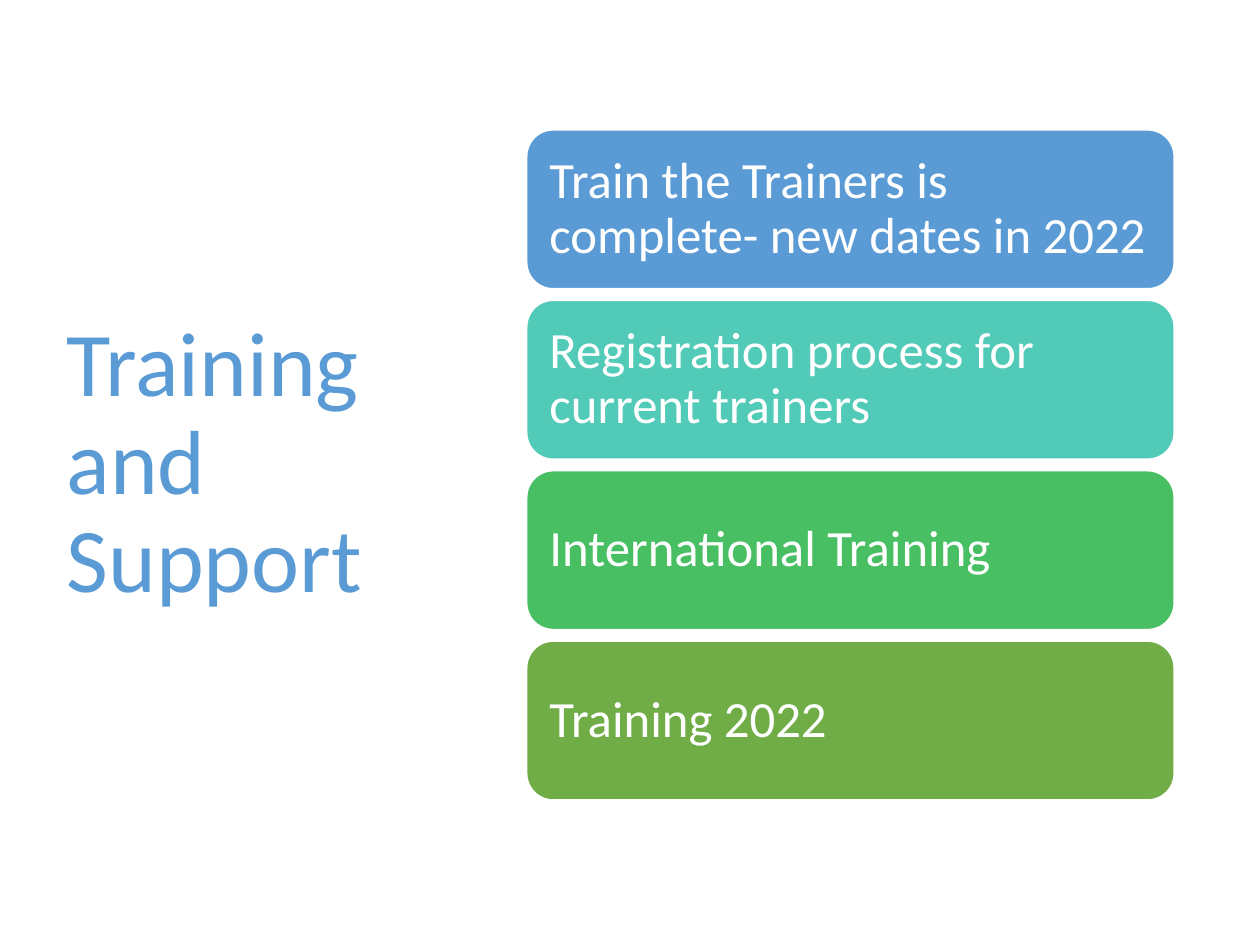
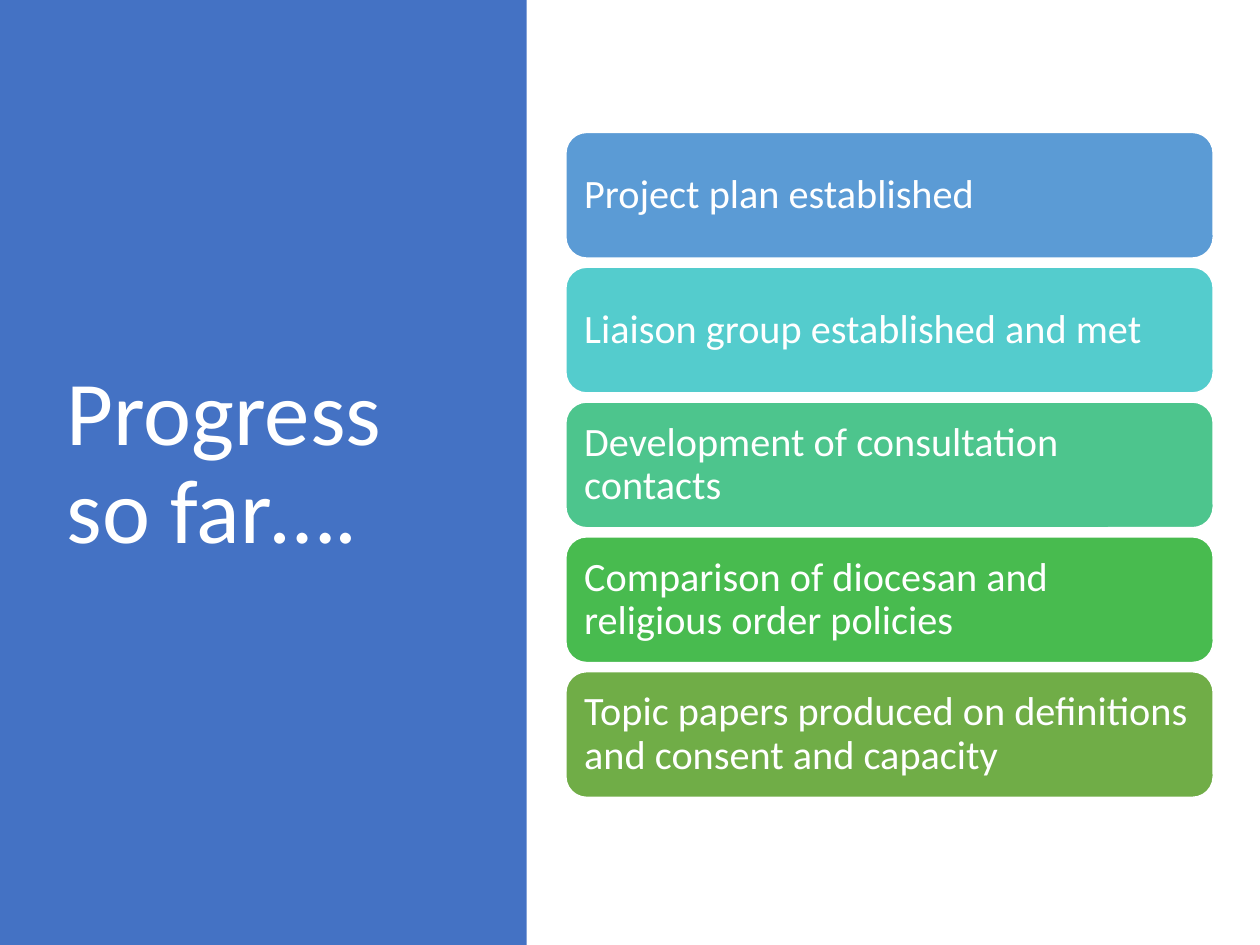
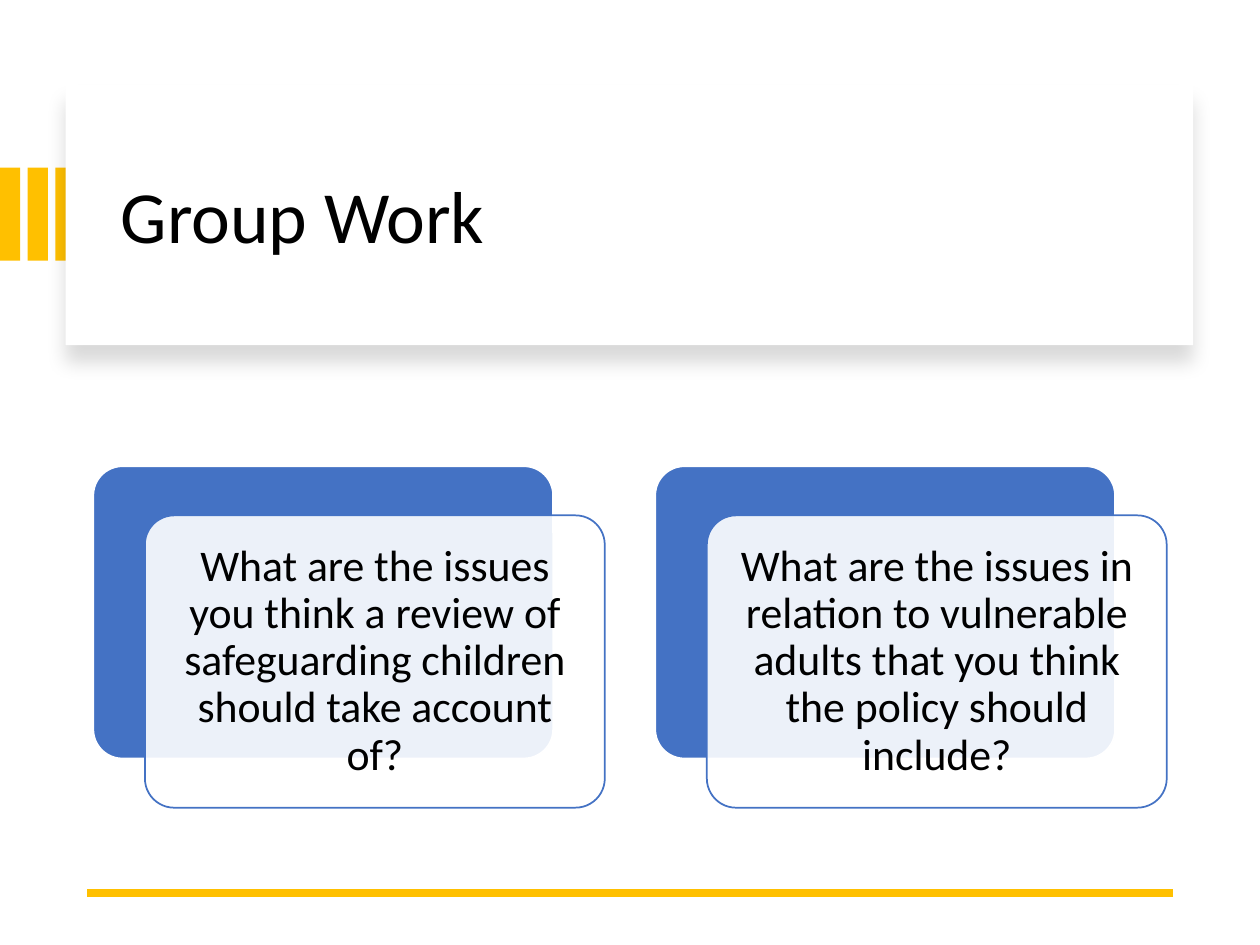
from lxml import etree
from pptx import Presentation
from pptx.dml.color import RGBColor
from pptx.enum.shapes import MSO_CONNECTOR, MSO_SHAPE
from pptx.enum.text import MSO_ANCHOR, PP_ALIGN
from pptx.oxml.ns import qn
from pptx.util import Emu, Pt

RECT, ROUNDED = MSO_SHAPE.RECTANGLE, MSO_SHAPE.ROUNDED_RECTANGLE
SLIDE_WIDTH, SLIDE_HEIGHT = 1000, 750
FONT = "Calibri"
WHITE, BLACK = "FFFFFF", "000000"
SKY, ROYAL, GREEN, AMBER = "5B9BD5", "4472C4", "70AD47", "FFC000"
SIDE_TITLE_BOX = (43, 68, 312, 602)


def px(length):
    """Turn px (100 to the inch) into EMU."""
    return Emu(round(length * 9144))


def rgb(colour):
    return RGBColor.from_string(colour)


def add_text(shape, text, size, colour, align=PP_ALIGN.LEFT, inset=None):
    frame = shape.text_frame
    frame.word_wrap = True
    frame.vertical_anchor = MSO_ANCHOR.MIDDLE
    if inset is not None:
        frame.margin_left = frame.margin_right = px(inset)
        frame.margin_top = frame.margin_bottom = px(inset)
    frame.text = text
    paragraph = frame.paragraphs[0]
    paragraph.alignment = align
    paragraph.line_spacing = 0.9
    font = paragraph.runs[0].font
    font.name, font.size = FONT, Pt(size)
    font.color.rgb = rgb(colour)


def add_title(slide, box, text, size, colour):
    title = slide.shapes.add_textbox(*map(px, box))
    add_text(title, text, size, colour)


def add_panel(slide, kind, box, fill, outline=None):
    panel = slide.shapes.add_shape(kind, *map(px, box))
    panel.shadow.inherit = False
    panel.fill.solid()
    panel.fill.fore_color.rgb = rgb(fill)
    if outline:
        panel.line.color.rgb = rgb(outline)
        panel.line.width = Pt(1)
    else:
        panel.line.fill.background()
    return panel


def set_alpha(colour_element, percent):
    etree.SubElement(colour_element, qn("a:alpha"), val=str(percent * 1000))


def add_drop_shadow(panel, blur, distance, percent):
    """Cast a soft black shadow straight down; lengths in points."""
    effects = panel._element.spPr.find(qn("a:effectLst"))
    shadow = etree.SubElement(
        effects, qn("a:outerShdw"), blurRad=str(Pt(blur)), dist=str(Pt(distance)),
        dir="5400000", algn="t", rotWithShape="0")
    set_alpha(etree.SubElement(shadow, qn("a:srgbClr"), val=BLACK), percent)


def add_card_stack(slide, box, cards, gap, size, inset):
    """Fill the box with equal cards, given as (text, fill) pairs."""
    left, top, width, height = box
    pitch = (height + gap) / len(cards)
    for row, (text, fill) in enumerate(cards):
        card_box = (left, top + row * pitch, width, pitch - gap)
        card = add_panel(slide, ROUNDED, card_box, fill, WHITE)
        add_text(card, text, size, WHITE, inset=inset)


def add_heading_band(slide, box, text):
    left, top, width, height = box
    for stripe in range(3):
        add_panel(slide, RECT, (stripe * 22, top + 66, 16, 74), AMBER)
    band = add_panel(slide, RECT, box, WHITE)
    add_drop_shadow(band, blur=11, distance=10, percent=15)
    add_title(slide, (left + 34, top + 22, width - 61, height - 37), text, 42, BLACK)


def add_question(slide, box, text):
    """Lay a translucent question card over a solid one, offset to the lower right."""
    left, top, width, height = box
    shift_x, shift_y = 41, 39
    card_size = (width - shift_x, height - shift_y)
    backing = add_panel(slide, ROUNDED, (left, top, *card_size), ROYAL, WHITE)
    front = add_panel(slide, ROUNDED, (left + shift_x, top + shift_y, *card_size),
                      WHITE, ROYAL)
    for card in (backing, front):
        card.adjustments[0] = 0.1
    set_alpha(front._element.spPr.find(qn("a:solidFill"))[0], 90)
    add_text(front, text, 25, BLACK, PP_ALIGN.CENTER, inset=10)


def add_footer_rule(slide, left, right, y):
    rule = slide.shapes.add_connector(
        MSO_CONNECTOR.STRAIGHT, px(right), px(y), px(left), px(y))
    rule.line.color.rgb = rgb(AMBER)
    rule.line.width = Pt(4.5)
    etree.SubElement(rule._element.spPr, qn("a:effectLst"))


def build_training(slide):
    add_title(slide, SIDE_TITLE_BOX, "Training and Support", 52, SKY)
    add_card_stack(slide, (418, 103, 514, 532), [
        ("Train the Trainers is complete- new dates in 2022", SKY),
        ("Registration process for current trainers", "52CAB8"),
        ("International Training", "49BF64"),
        ("Training 2022", GREEN),
    ], gap=9, size=29, inset=12)


def build_progress(slide):
    add_panel(slide, RECT, (0, 0, 418, SLIDE_HEIGHT), ROYAL)
    add_title(slide, SIDE_TITLE_BOX, "Progress so far….", 52, WHITE)
    add_card_stack(slide, (449, 105, 514, 528), [
        ("Project plan established", SKY),
        ("Liaison group established and met", "54CCCD"),
        ("Development of consultation contacts", "4DC58D"),
        ("Comparison of diocesan and religious order policies", "48BB4F"),
        ("Topic papers produced on definitions and consent and capacity", GREEN),
    ], gap=7, size=23, inset=10)


def build_group_work(slide):
    add_heading_band(slide, (52, 67, 895, 207), "Group Work")
    add_footer_rule(slide, 69, 931, 709)
    questions = [
        "What are the issues you think a review of safeguarding children "
        "should take account of?",
        "What are the issues in relation to vulnerable adults that you think "
        "the policy should include?",
    ]
    for column, question in enumerate(questions):
        add_question(slide, (74 + column * 446, 370, 406, 271), question)


def main():
    deck = Presentation()
    deck.slide_width, deck.slide_height = px(SLIDE_WIDTH), px(SLIDE_HEIGHT)
    blank = deck.slide_layouts[6]
    for build in (build_training, build_progress, build_group_work):
        build(deck.slides.add_slide(blank))
    deck.save("out.pptx")


if __name__ == "__main__":
    main()
